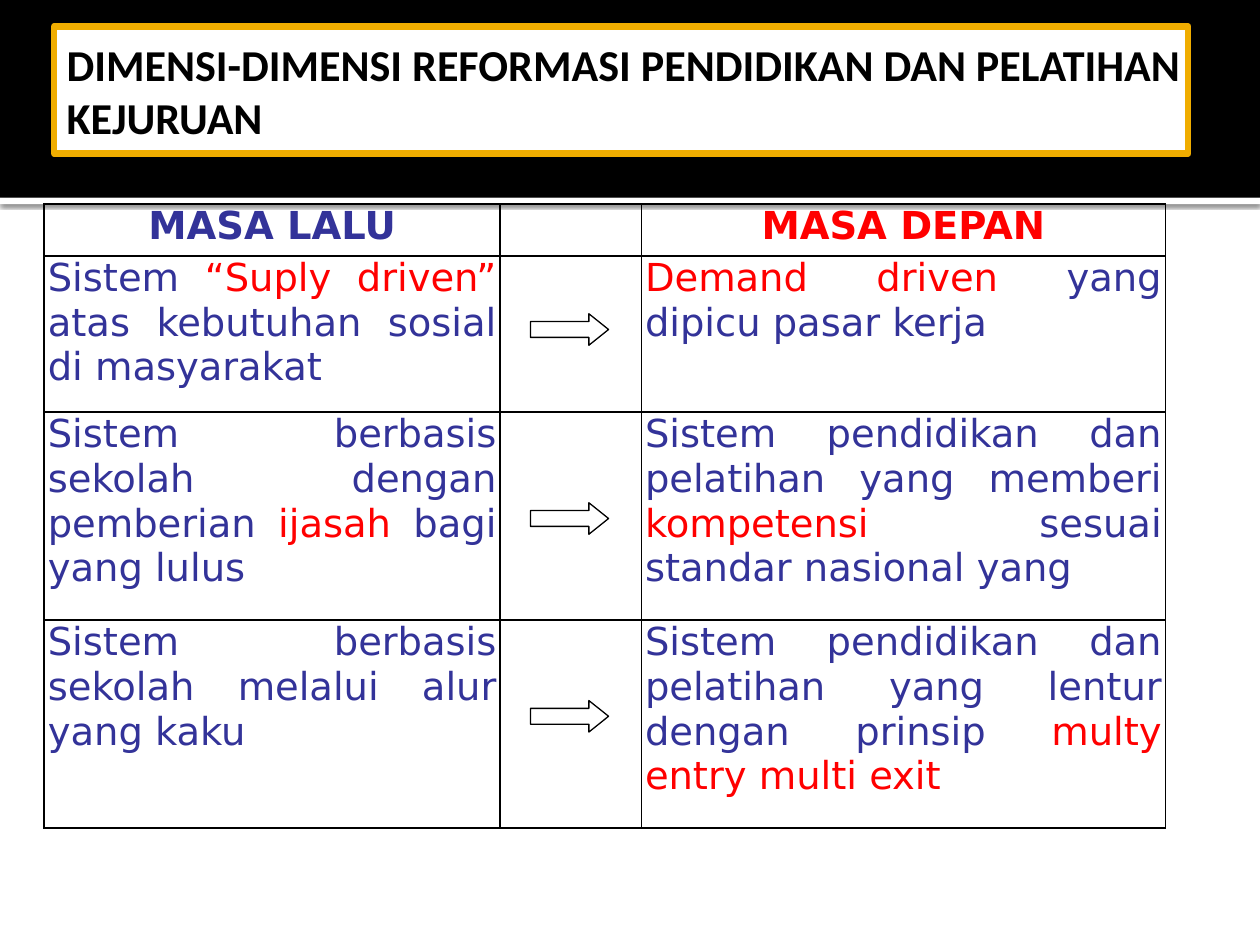
import dataclasses

import lxml.etree
import pptx
import pptx.dml.color
import pptx.enum.shapes
import pptx.enum.text
import pptx.oxml.ns
import pptx.util

Inches = pptx.util.Inches
Pt = pptx.util.Pt
RGBColor = pptx.dml.color.RGBColor
Align = pptx.enum.text.PP_ALIGN
ShapeType = pptx.enum.shapes.MSO_SHAPE
qn = pptx.oxml.ns.qn


@dataclasses.dataclass(frozen=True)
class Theme:
    """Colours, fonts and sizes of the slide."""
    black: str = "000000"
    white: str = "FFFFFF"
    gold: str = "F0AD00"
    navy: str = "333399"
    red: str = "FF0000"
    title_font: str = "Calibri"
    body_font: str = "DejaVu Sans"
    title_size: float = 25.2
    body_size: float = 22


THEME = Theme()
HEADERS = [("MASA LALU", THEME.navy), ("MASA DEPAN", THEME.red)]
COMPARISONS = [
    ([("Sistem ", THEME.navy), ("“Suply driven” ", THEME.red),
      ("atas kebutuhan sosial di masyarakat", THEME.navy)],
     [("Demand driven", THEME.red), (" yang dipicu pasar kerja", THEME.navy)]),
    ([("Sistem berbasis sekolah dengan pemberian ", THEME.navy),
      ("ijasah ", THEME.red), ("bagi yang lulus", THEME.navy)],
     [("Sistem pendidikan dan pelatihan yang memberi ", THEME.navy),
      ("kompetensi ", THEME.red), ("sesuai standar nasional yang ", THEME.navy)]),
    ([("Sistem berbasis sekolah melalui alur yang kaku", THEME.navy)],
     [("Sistem pendidikan dan pelatihan yang lentur dengan prinsip ", THEME.navy),
      ("multy entry multi exit", THEME.red)]),
]


def add_box(slide, kind, box, fill, line=None, width=0):
    """Add a flat preset shape in the given box, in inches."""
    shape = slide.shapes.add_shape(kind, *map(Inches, box))
    shape.shadow.inherit = False
    shape.fill.solid()
    shape.fill.fore_color.rgb = RGBColor.from_string(fill)
    if line:
        shape.line.color.rgb = RGBColor.from_string(line)
        shape.line.width = Pt(width)
    else:
        shape.line.fill.background()
    return shape


def add_run(paragraph, text, font, size, color, bold=False):
    """Append one formatted run to a paragraph."""
    run = paragraph.add_run()
    run.text = text
    run.font.name = font
    run.font.size = Pt(size)
    run.font.bold = bold
    run.font.color.rgb = RGBColor.from_string(color)


def add_shadow(shape, blur, distance, opacity):
    """Give a shape a soft black shadow that falls downwards."""
    effects = shape._element.spPr.find(qn("a:effectLst"))
    shadow = lxml.etree.SubElement(
        effects, qn("a:outerShdw"), blurRad=str(Pt(blur)), dist=str(Pt(distance)),
        dir=str(90 * 60000), algn="t", rotWithShape="0")
    color = lxml.etree.SubElement(shadow, qn("a:srgbClr"), val=THEME.black)
    lxml.etree.SubElement(color, qn("a:alpha"), val=str(opacity * 1000))


def add_header_band(slide, box):
    """Add the black band and the white strip with a shadow below it."""
    left, top, width, height = box
    strip = add_box(slide, ShapeType.RECTANGLE,
                    (left, top + height, width, 0.05), THEME.white)
    add_shadow(strip, 2.5, 0.8, 60)
    add_box(slide, ShapeType.RECTANGLE, box, THEME.black)


def add_title(slide, box, text):
    """Add the framed title."""
    shape = add_box(slide, ShapeType.RECTANGLE, box, THEME.white, THEME.gold, 3.78)
    lxml.etree.SubElement(shape.line._get_or_add_ln(), qn("a:round"))
    frame = shape.text_frame
    frame.word_wrap = True
    frame.vertical_anchor = pptx.enum.text.MSO_ANCHOR.MIDDLE
    frame.margin_left = Inches(0.1)
    frame.margin_right = frame.margin_top = frame.margin_bottom = Inches(0.05)
    paragraph = frame.paragraphs[0]
    paragraph.alignment = Align.LEFT
    add_run(paragraph, text, THEME.title_font, THEME.title_size, THEME.black, True)


def format_cell(cell):
    """Clear a cell's fill, tighten its margins and draw its borders."""
    cell.margin_left = cell.margin_right = Inches(0.03)
    cell.margin_top = cell.margin_bottom = 0
    properties = cell._tc.get_or_add_tcPr()
    for side in ("lnL", "lnR", "lnT", "lnB"):
        border = lxml.etree.SubElement(properties, qn(f"a:{side}"), w=str(Pt(1)))
        fill = lxml.etree.SubElement(border, qn("a:solidFill"))
        lxml.etree.SubElement(fill, qn("a:srgbClr"), val=THEME.black)
    cell.fill.background()


def fill_cell(cell, runs, alignment, bold=False):
    """Write coloured runs into a cell."""
    paragraph = cell.text_frame.paragraphs[0]
    paragraph.alignment = alignment
    for text, color in runs:
        add_run(paragraph, text, THEME.body_font, THEME.body_size, color, bold)


def add_comparison_table(slide, box, column_widths, row_heights):
    """Add the past and future table with an empty column for arrows."""
    table = slide.shapes.add_table(len(row_heights), len(column_widths),
                                   *map(Inches, box)).table
    table.first_row = table.horz_banding = False
    for column, width in zip(table.columns, column_widths):
        column.width = Inches(width)
    for row, height in zip(table.rows, row_heights):
        row.height = Inches(height)
    for cell in table.iter_cells():
        format_cell(cell)
    for column, header in zip((0, 2), HEADERS):
        fill_cell(table.cell(0, column), [header], Align.CENTER, True)
    for row, (past, future) in enumerate(COMPARISONS, start=1):
        fill_cell(table.cell(row, 0), past, Align.JUSTIFY)
        fill_cell(table.cell(row, 2), future, Align.JUSTIFY)


def add_arrow(slide, box):
    """Add an outlined arrow from past to future."""
    arrow = add_box(slide, ShapeType.RIGHT_ARROW, box, THEME.white, THEME.black, 0.75)
    arrow.adjustments[0] = 0.5
    arrow.adjustments[1] = 0.625


def main():
    """Build and save the presentation."""
    presentation = pptx.Presentation()
    presentation.slide_width = Inches(10)
    presentation.slide_height = Inches(7.5)
    slide = presentation.slides.add_slide(presentation.slide_layouts[6])
    add_header_band(slide, (0, 0, 10, 1.57))
    add_title(slide, (0.43, 0.21, 9, 1.01),
              "DIMENSI-DIMENSI REFORMASI PENDIDIKAN DAN PELATIHAN KEJURUAN")
    add_comparison_table(slide, (0.35, 1.62, 8.9, 4.96),
                         (3.62, 1.12, 4.16), (0.41, 1.24, 1.65, 1.65))
    for top in (2.49, 3.99, 5.56):
        add_arrow(slide, (4.21, top, 0.62, 0.25))
    presentation.save("out.pptx")


if __name__ == "__main__":
    main()
